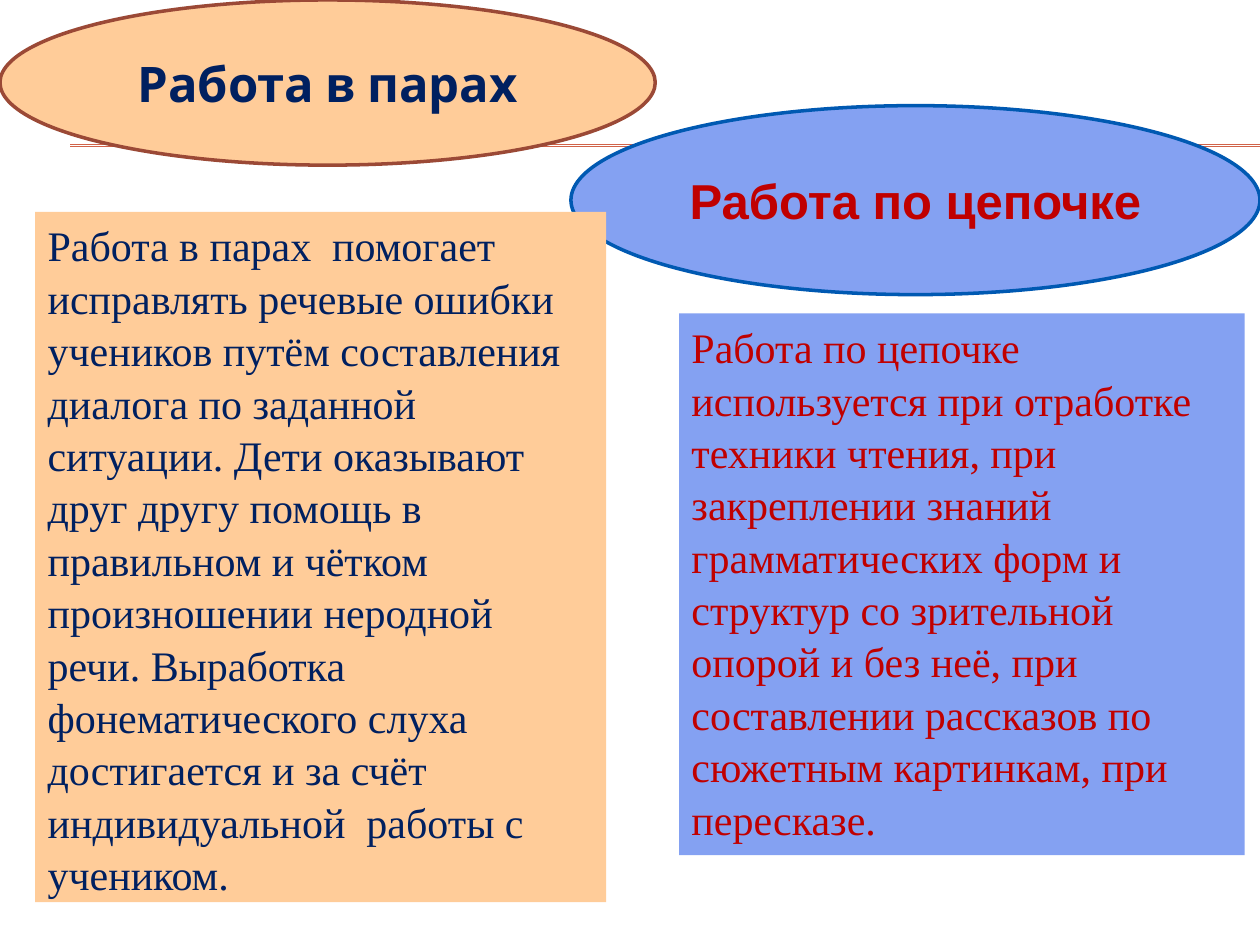
from dataclasses import dataclass
from typing import Optional

from lxml import etree
from pptx import Presentation
from pptx.dml.color import RGBColor
from pptx.enum.shapes import MSO_CONNECTOR, MSO_SHAPE
from pptx.enum.text import MSO_ANCHOR, PP_ALIGN
from pptx.oxml.ns import qn
from pptx.util import Cm, Pt

OVAL, RECT = MSO_SHAPE.OVAL, MSO_SHAPE.RECTANGLE
STRAIGHT = MSO_CONNECTOR.STRAIGHT
TOP, MIDDLE = MSO_ANCHOR.TOP, MSO_ANCHOR.MIDDLE
LEFT, CENTER = PP_ALIGN.LEFT, PP_ALIGN.CENTER


@dataclass(frozen=True)
class Theme:
    peach: str = "FFCC99"
    brown: str = "9B4936"
    navy: str = "002060"
    sky: str = "84A1F2"
    blue: str = "0059B2"
    red: str = "C00000"
    rule: str = "D16349"
    title: int = 28
    body: int = 24
    serif: str = "Times New Roman"
    edge: float = 2
    thin: float = 0.75
    lead: float = 1.04


@dataclass(frozen=True)
class Panel:
    """A filled shape with text; place is left, top, width, height in cm."""
    text: str
    place: tuple
    fill: str
    ink: str
    font: str
    edge: Optional[str] = None  # outlined panels are the oval titles


THEME = Theme()

PANELS = [
    Panel("Работа в парах", (0, 0, 13.21, 3.33),
          THEME.peach, THEME.navy, "Cabin", THEME.brown),
    Panel("Работа по цепочке", (11.51, 2.13, 13.89, 3.81),
          THEME.sky, THEME.red, "Arial", THEME.blue),
    Panel("Работа в парах  помогает исправлять речевые ошибки учеников "
          "путём составления диалога по заданной ситуации. Дети оказывают "
          "друг другу помощь в правильном и чётком произношении неродной "
          "речи. Выработка фонематического слуха достигается и за счёт "
          "индивидуальной  работы с учеником.",
          (0.71, 4.27, 11.51, 13.92), THEME.peach, THEME.navy, THEME.serif),
    Panel("Работа по цепочке используется при отработке техники чтения, "
          "при закреплении знаний грамматических форм и структур со "
          "зрительной опорой и без неё, при составлении рассказов по "
          "сюжетным картинкам, при пересказе.",
          (13.69, 6.32, 11.4, 10.92), THEME.sky, THEME.red, THEME.serif),
]


def add_rule(slide, y: float) -> None:
    line = slide.shapes.add_connector(
        STRAIGHT, Cm(1.42), Cm(y), Cm(25.4), Cm(y))
    line.line.color.rgb = RGBColor.from_string(THEME.rule)
    line.line.width = Pt(THEME.thin)
    etree.SubElement(line._element.spPr, qn("a:effectLst"))


def add_panel(slide, panel: Panel) -> None:
    title = panel.edge is not None
    shape = slide.shapes.add_shape(
        OVAL if title else RECT, *(Cm(n) for n in panel.place))
    shape.shadow.inherit = False
    shape.fill.solid()
    shape.fill.fore_color.rgb = RGBColor.from_string(panel.fill)
    if title:
        shape.line.color.rgb = RGBColor.from_string(panel.edge)
        shape.line.width = Pt(THEME.edge)
    else:
        shape.line.fill.background()

    # Text
    frame = shape.text_frame
    frame.text = panel.text
    frame.word_wrap = True
    frame.vertical_anchor = MIDDLE if title else TOP
    para = frame.paragraphs[0]
    para.alignment = CENTER if title else LEFT
    if not title:
        para.line_spacing = THEME.lead
    font = para.runs[0].font
    font.name = panel.font
    font.size = Pt(THEME.title if title else THEME.body)
    font.bold = title
    font.color.rgb = RGBColor.from_string(panel.ink)


def main() -> None:
    deck = Presentation()
    deck.slide_width, deck.slide_height = Cm(25.4), Cm(19.05)
    slide = deck.slides.add_slide(deck.slide_layouts[6])

    # Double rule behind the titles
    for y in (2.92, 2.95):
        add_rule(slide, y)

    # Oval titles, then the text panels
    for panel in PANELS:
        add_panel(slide, panel)

    deck.save("out.pptx")


if __name__ == "__main__":
    main()
